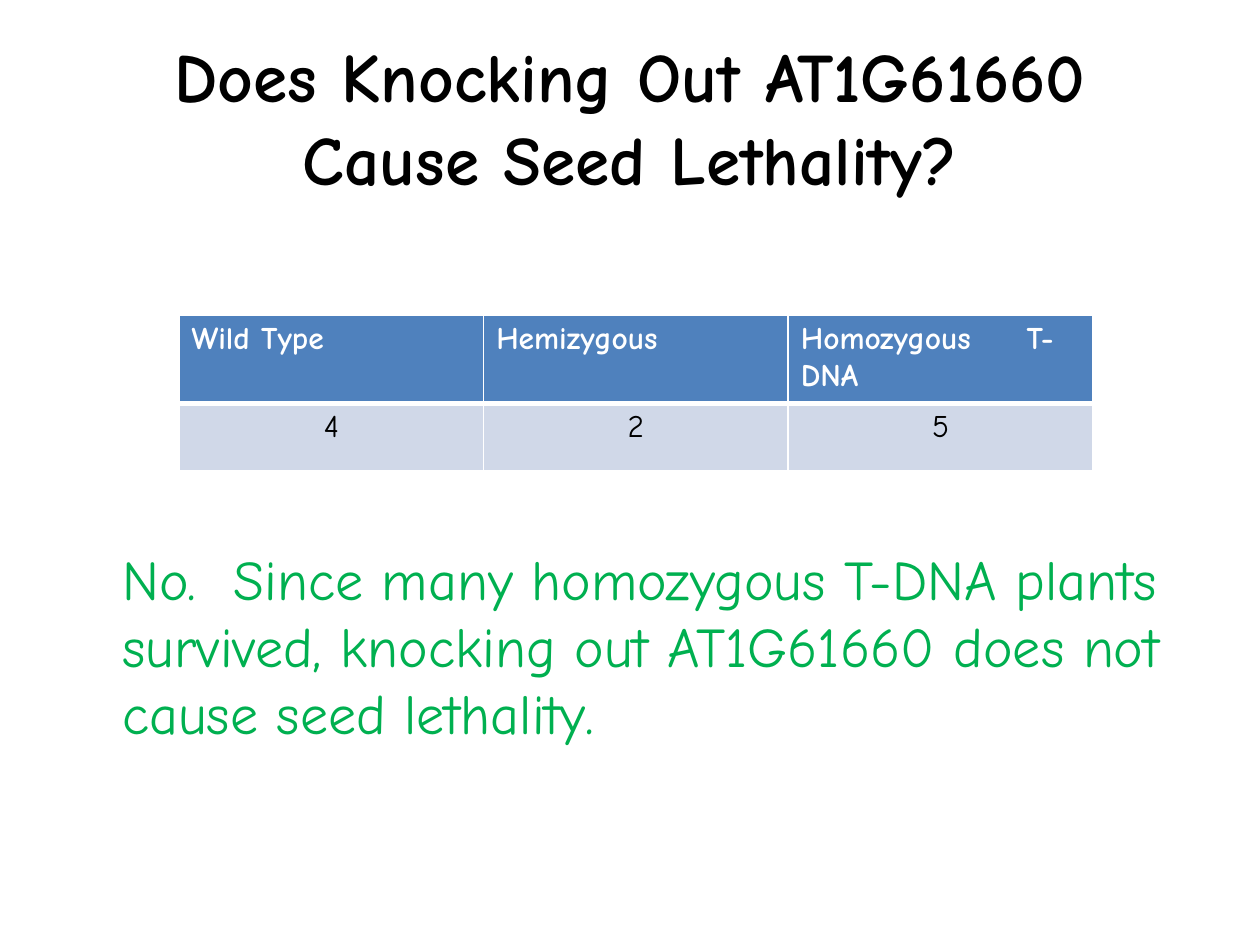
from lxml import etree
from pptx import Presentation
from pptx.dml.color import RGBColor
from pptx.enum.text import MSO_ANCHOR, PP_ALIGN
from pptx.oxml.ns import qn
from pptx.util import Cm, Pt

LEFT, CENTER = PP_ALIGN.LEFT, PP_ALIGN.CENTER
TOP, MIDDLE = MSO_ANCHOR.TOP, MSO_ANCHOR.MIDDLE
BLANK_LAYOUT = 6
FONT = "Comic Neue"
BLACK, WHITE, GREEN = "000000", "FFFFFF", "00B050"
HEADER_BLUE, ROW_BLUE = "4F81BD", "D0D8E8"

TITLE_FORMAT = {"size": Pt(39.6), "bold": True}
ANSWER_FORMAT = {"size": Pt(32), "bold": False}
HEADER_FORMAT = {"size": Pt(18), "bold": True}
COUNT_FORMAT = {"size": Pt(18), "bold": False}

GENOTYPES = ["Wild Type", "Hemizygous", "Homozygous\tT-DNA"]
PLANT_COUNTS = ["4", "2", "5"]
COLUMN_WIDTH, ROW_HEIGHT = Cm(6.14), Cm(1.37)
TAB_STOP = Cm(4.55)


def color(hex_value):
    return RGBColor.from_string(hex_value)


def write_text(text_frame, text, font_format, text_color, alignment):
    paragraph = text_frame.paragraphs[0]
    paragraph.alignment = alignment
    run = paragraph.add_run()
    run.text = text
    run.font.name = FONT
    run.font.color.rgb = color(text_color)
    for name, value in font_format.items():
        setattr(run.font, name, value)
    return paragraph


def add_text(slide, box, text, font_format, text_color, alignment, anchor):
    text_frame = slide.shapes.add_textbox(*box).text_frame
    text_frame.word_wrap = True
    text_frame.vertical_anchor = anchor
    write_text(text_frame, text, font_format, text_color, alignment)


def add_tab_stop(paragraph, position):
    properties = paragraph._p.get_or_add_pPr()
    tab_list = etree.SubElement(properties, qn("a:tabLst"))
    etree.SubElement(tab_list, qn("a:tab"), pos=str(position), algn="l")


def set_borders(cell, widths):
    properties = cell._tc.get_or_add_tcPr()
    for side, width in widths.items():
        line = etree.SubElement(properties, qn(f"a:ln{side}"), w=str(Pt(width)))
        fill = etree.SubElement(line, qn("a:solidFill"))
        etree.SubElement(fill, qn("a:srgbClr"), val=WHITE)


def fill_row(row, texts, font_format, text_color, alignment, fill, borders):
    row.height = ROW_HEIGHT
    for cell, text in zip(row.cells, texts):
        # Borders come before the fill in the cell properties
        set_borders(cell, borders)
        cell.fill.solid()
        cell.fill.fore_color.rgb = color(fill)
        paragraph = write_text(cell.text_frame, text, font_format, text_color, alignment)
        if "\t" in text:
            add_tab_stop(paragraph, TAB_STOP)


def add_genotype_table(slide):
    columns = len(GENOTYPES)
    table = slide.shapes.add_table(
        2, columns, Cm(3.61), Cm(6.35), COLUMN_WIDTH * columns, ROW_HEIGHT * 2
    ).table
    for column in table.columns:
        column.width = COLUMN_WIDTH
    fill_row(table.rows[0], GENOTYPES, HEADER_FORMAT, WHITE, LEFT, HEADER_BLUE,
             {"L": 1, "R": 1, "T": 1, "B": 3})
    fill_row(table.rows[1], PLANT_COUNTS, COUNT_FORMAT, BLACK, CENTER, ROW_BLUE,
             {"L": 1, "R": 1, "T": 3, "B": 1})


def main():
    presentation = Presentation()
    presentation.slide_width, presentation.slide_height = Cm(25.4), Cm(19.05)
    slide = presentation.slides.add_slide(presentation.slide_layouts[BLANK_LAYOUT])

    # Question
    add_text(slide, (Cm(1.27), Cm(0.76), Cm(22.86), Cm(3.18)),
             "Does Knocking Out AT1G61660 Cause Seed Lethality?",
             TITLE_FORMAT, BLACK, CENTER, MIDDLE)

    # Answer
    add_text(slide, (Cm(2.22), Cm(10.85), Cm(21.91), Cm(4.5)),
             "No.  Since many homozygous T-DNA plants survived, "
             "knocking out AT1G61660 does not cause seed lethality.",
             ANSWER_FORMAT, GREEN, LEFT, TOP)

    # Plants per genotype
    add_genotype_table(slide)

    presentation.save("out.pptx")


if __name__ == "__main__":
    main()
